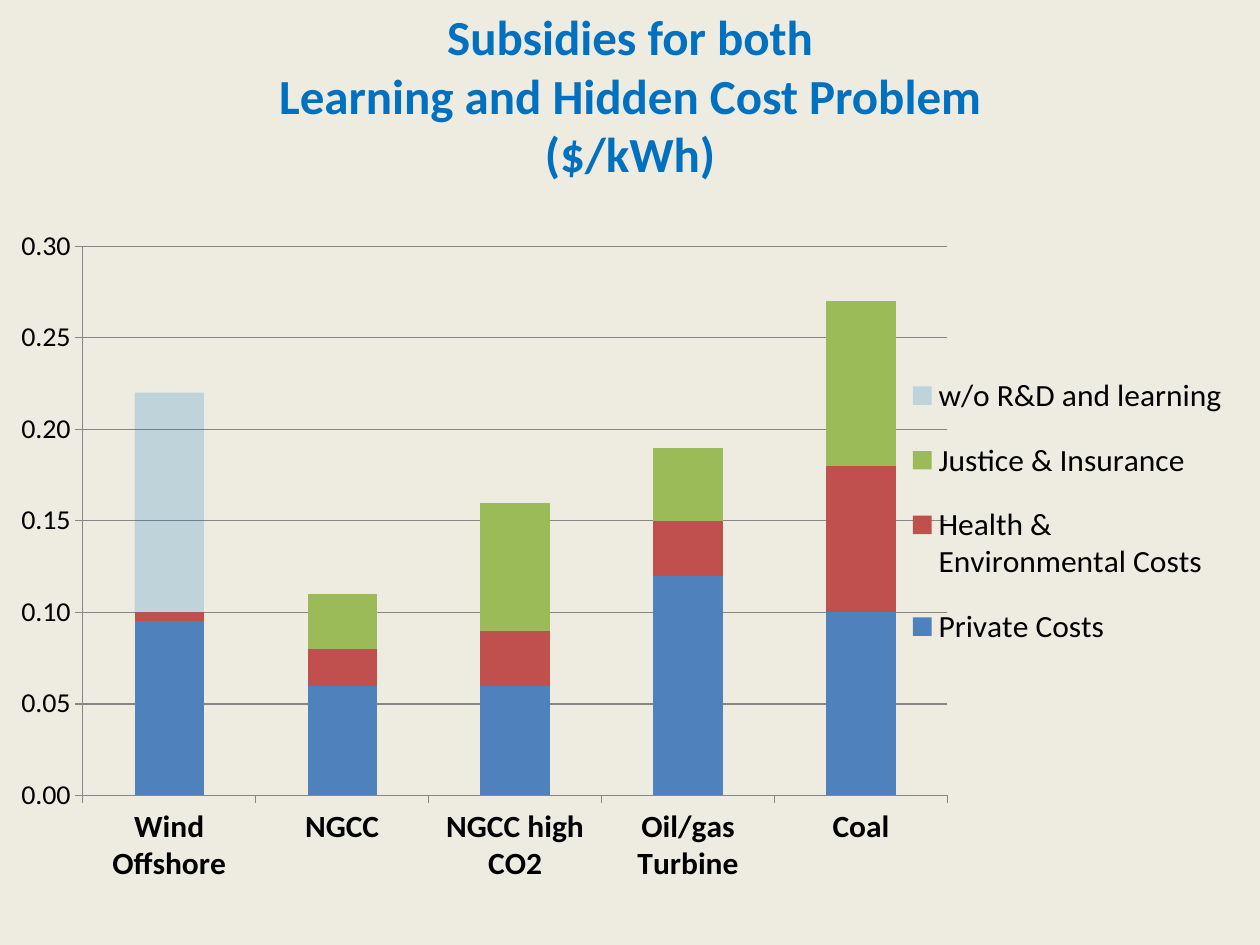
from dataclasses import dataclass

from lxml import etree
from pptx import Presentation
from pptx.chart.data import CategoryChartData
from pptx.dml.color import RGBColor
from pptx.enum import chart as ch, text
from pptx.oxml import parse_xml
from pptx.oxml.ns import nsdecls, qn
from pptx.util import Pt


@dataclass(frozen=True)
class Theme:
    font: str = "Calibri"
    background: str = "EEECE1"
    title: str = "0070C0"
    ink: str = "000000"
    line: str = "868686"
    title_size: int = 28
    label_size: int = 18
    value_size: int = 16
    base_size: int = 10


@dataclass(frozen=True)
class CostSeries:
    name: str
    values: tuple[float, ...]
    color: str
    opacity: int = 100


THEME = Theme()
CATEGORIES = ("Wind Offshore", "NGCC", "NGCC high CO2", "Oil/gas Turbine", "Coal")
COSTS = (
    CostSeries("Private Costs", (0.095, 0.06, 0.06, 0.12, 0.1), "4F81BD"),
    CostSeries("Health & Environmental Costs", (0.005, 0.02, 0.03, 0.03, 0.08), "C0504D"),
    CostSeries("Justice & Insurance", (0, 0.03, 0.07, 0.04, 0.09), "9BBB59"),
    CostSeries("w/o R&D and learning", (0.12, 0, 0, 0, 0), "0070C0", 20),
)
TITLE_LINES = ("Subsidies for both", "Learning and Hidden Cost Problem", "($/kWh)")


def apply(obj, formats: dict) -> None:
    for name, value in formats.items():
        setattr(obj, name, value)


def style_font(font, size: int, color: str, bold: bool = False) -> None:
    apply(font, {"name": THEME.font, "size": Pt(size), "bold": bold})
    font.color.rgb = RGBColor.from_string(color)


def style_line(fmt) -> None:
    fmt.line.color.rgb = RGBColor.from_string(THEME.line)
    fmt.line.width = Pt(0.75)


def set_layout(element, after: str, box: tuple[float, ...], inner: bool = False) -> None:
    """Place a chart part by fractions of the chart area."""
    for old in element.findall(qn("c:layout")):
        element.remove(old)
    target = '<c:layoutTarget val="inner"/>' if inner else ""
    modes = '<c:xMode val="edge"/><c:yMode val="edge"/>'
    sizes = "".join(f'<c:{k} val="{v}"/>' for k, v in zip("xywh", box))
    layout = parse_xml(f'<c:layout {nsdecls("c")}><c:manualLayout>{target}{modes}{sizes}'
                       "</c:manualLayout></c:layout>")
    previous = element.find(qn(after)) if after else None
    element.insert(0 if previous is None else element.index(previous) + 1, layout)


def add_title(s) -> None:
    sp = s.shapes.title
    apply(sp, {"left": Pt(18), "top": Pt(0), "width": Pt(684), "height": Pt(108)})
    tf = sp.text_frame
    apply(tf, {"word_wrap": True, "vertical_anchor": text.MSO_ANCHOR.MIDDLE})
    p = tf.paragraphs[0]
    p.alignment = text.PP_ALIGN.CENTER
    for i, line in enumerate(TITLE_LINES):
        if i:
            p.add_line_break()
        r = p.add_run()
        r.text = line
        style_font(r.font, THEME.title_size, THEME.title, bold=True)
    # Line breaks share the title's type size
    for br in p._p.findall(qn("a:br")):
        etree.SubElement(br, qn("a:rPr")).set("sz", str(THEME.title_size * 100))


def fill_series(series, cost: CostSeries) -> None:
    series.invert_if_negative = False
    fill = series.format.fill
    fill.solid()
    fill.fore_color.rgb = RGBColor.from_string(cost.color)
    if cost.opacity < 100:
        color = series._element.find(".//" + qn("a:srgbClr"))
        etree.SubElement(color, qn("a:alpha")).set("val", str(cost.opacity * 1000))


def add_cost_chart(s) -> None:
    data = CategoryChartData(number_format="General")
    data.categories = CATEGORIES
    for cost in COSTS:
        data.add_series(cost.name, cost.values)
    chart = s.shapes.add_chart(ch.XL_CHART_TYPE.COLUMN_STACKED, Pt(12.24), Pt(126),
                               Pt(696.24), Pt(378), data).chart
    style_font(chart.font, THEME.base_size, THEME.ink)
    chart.has_title = False

    # Stacked columns
    plot = chart.plots[0]
    apply(plot, {"gap_width": 150, "overlap": 100, "vary_by_categories": False})
    for series, cost in zip(plot.series, COSTS):
        fill_series(series, cost)
    set_layout(chart._chartSpace.chart.plotArea, "", (0.05, 0.04, 0.71, 0.85), inner=True)

    # Axes
    value_axis = chart.value_axis
    apply(value_axis, {"minimum_scale": 0, "maximum_scale": 0.3, "major_unit": 0.05,
                       "has_major_gridlines": True})
    apply(value_axis.tick_labels, {"number_format": "0.00", "number_format_is_linked": False})
    style_line(value_axis.major_gridlines.format)
    for axis, size, bold in ((chart.category_axis, THEME.label_size, True),
                             (value_axis, THEME.value_size, False)):
        axis.major_tick_mark = ch.XL_TICK_MARK.OUTSIDE
        style_font(axis.tick_labels.font, size, THEME.ink, bold)
        style_line(axis.format)

    # Legend
    chart.has_legend = True
    legend = chart.legend
    apply(legend, {"position": ch.XL_LEGEND_POSITION.RIGHT, "include_in_layout": False})
    style_font(legend.font, THEME.label_size, THEME.ink)
    set_layout(legend._element, "c:legendPos", (0.73, 0.2, 0.26, 0.5))


def main() -> None:
    prs = Presentation()
    apply(prs, {"slide_width": Pt(720), "slide_height": Pt(540)})
    s = prs.slides.add_slide(prs.slide_layouts[5])
    s.background.fill.solid()
    s.background.fill.fore_color.rgb = RGBColor.from_string(THEME.background)
    add_title(s)
    add_cost_chart(s)
    prs.save("out.pptx")


if __name__ == "__main__":
    main()
